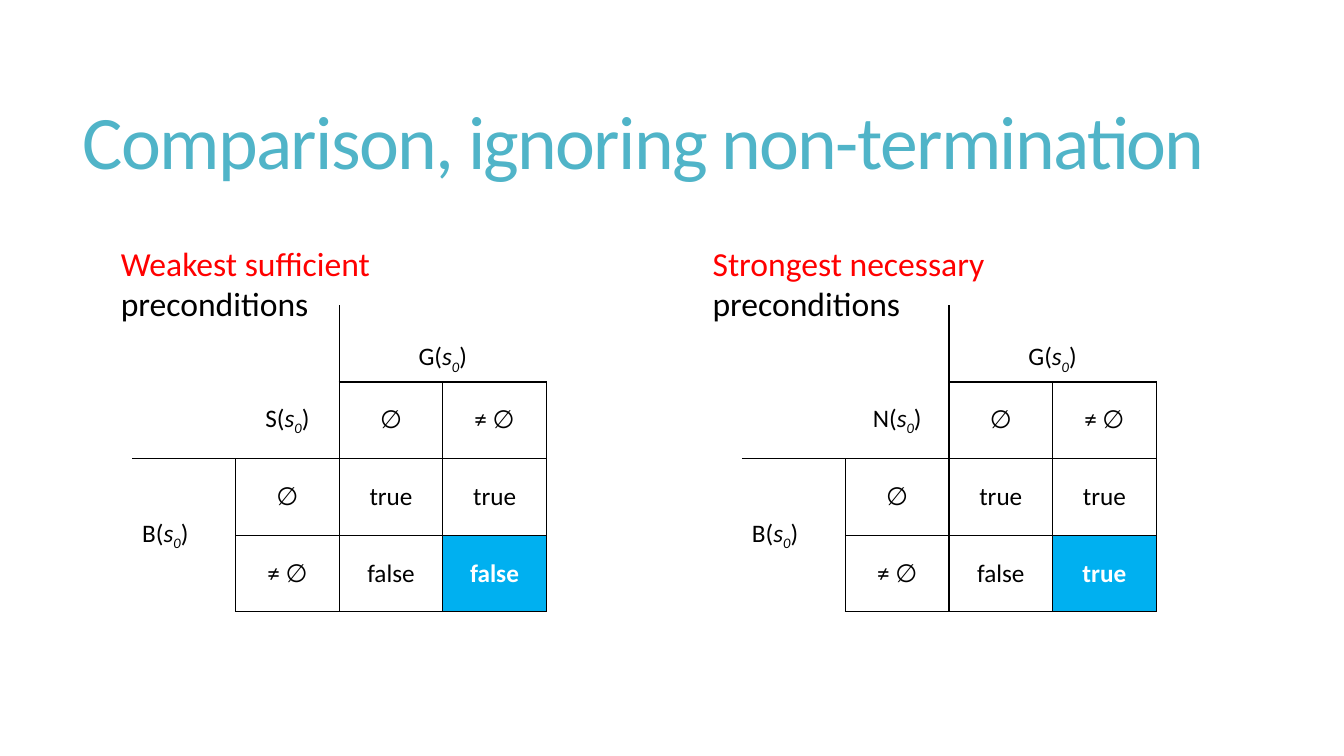
import dataclasses

import pptx
import pptx.dml.color
import pptx.enum.text
import pptx.oxml
import pptx.oxml.ns
import pptx.util

ALIGN = pptx.enum.text.PP_ALIGN
ANCHOR = pptx.enum.text.MSO_ANCHOR


@dataclasses.dataclass(frozen=True)
class Theme:
    """Colours, font and type sizes of the slide."""
    font: str = "Calibri"
    title: str = "50B4C8"
    text: str = "000000"
    accent: str = "FF0000"
    mark: str = "00B0F0"
    light: str = "FFFFFF"
    title_size: int = 54
    head_size: int = 24
    cell_size: int = 18
    border: int = 1


class Deck:
    """Draws elements on one slide, placed on a grid of 100 columns by 100 rows."""

    def __init__(self, theme):
        """Open a presentation with one title-only slide."""
        self.theme = theme
        self.prs = pptx.Presentation()
        self.prs.slide_width = pptx.util.Inches(13.33)
        self.prs.slide_height = pptx.util.Inches(7.5)
        self.slide = self.prs.slides.add_slide(self.prs.slide_layouts[5])

    def box(self, x, y, w, h):
        """Turn grid columns and rows into lengths."""
        col, row = self.prs.slide_width / 100, self.prs.slide_height / 100
        return [pptx.util.Emu(round(n)) for n in (x * col, y * row, w * col, h * row)]

    def run(self, p, text, size, color, baseline=0, spacing=0, **style):
        """Add one formatted run to a paragraph."""
        r = p.add_run()
        r.text = text
        r.font.color.rgb = pptx.dml.color.RGBColor.from_string(color)
        for name, value in {"name": self.theme.font, "size": pptx.util.Pt(size), **style}.items():
            setattr(r.font, name, value)
        for name, value in {"baseline": baseline, "spc": spacing}.items():
            if value:
                r._r.get_or_add_rPr().set(name, str(value))

    def title(self, text, *place):
        """Move and format the title placeholder."""
        sp = self.slide.shapes.title
        sp.left, sp.top, sp.width, sp.height = self.box(*place)
        tf = sp.text_frame
        tf.word_wrap = True
        tf.vertical_anchor = ANCHOR.MIDDLE
        p = tf.paragraphs[0]
        p.alignment, p.line_spacing = ALIGN.LEFT, 0.85
        self.run(p, text, self.theme.title_size, self.theme.title, spacing=-120)

    def heading(self, first, second, *place):
        """Add a two-line heading with an accented first line."""
        tf = self.slide.shapes.add_textbox(*self.box(*place)).text_frame
        tf.word_wrap = True
        p = tf.paragraphs[0]
        self.run(p, first, self.theme.head_size, self.theme.accent)
        p.add_line_break()
        self.run(p, second, self.theme.head_size, self.theme.text)

    def borders(self, cell, edges):
        """Draw the named edges of a cell and clear the others."""
        tcPr = cell._tc.get_or_add_tcPr()
        width = pptx.util.Pt(self.theme.border)
        solid = f'<a:solidFill><a:srgbClr val="{self.theme.text}"/></a:solidFill>'
        for i, edge in enumerate("LRTB"):
            paint = solid if edge in edges else "<a:noFill/>"
            tcPr.insert(i, pptx.oxml.parse_xml(
                f'<a:ln{edge} {pptx.oxml.ns.nsdecls("a")} w="{width}">{paint}</a:ln{edge}>'))

    def cell(self, cell, text, marked):
        """Fill one cell; a trailing (s0) is set in italics with a subscript."""
        t = self.theme
        cell.vertical_anchor = ANCHOR.MIDDLE
        cell.fill.background()
        if marked:
            cell.fill.solid()
            cell.fill.fore_color.rgb = pptx.dml.color.RGBColor.from_string(t.mark)
        p = cell.text_frame.paragraphs[0]
        p.alignment = ALIGN.LEFT if text.startswith("B") else ALIGN.CENTER
        if text.endswith("(s0)"):
            parts = [(text[:-3], {}), ("s", {"italic": True}),
                     ("0", {"italic": True, "baseline": -25000}), (")", {})]
        else:
            parts = [(text, {"bold": marked})] if text else []
        for part, style in parts:
            self.run(p, part, t.cell_size, t.light if marked else t.text, **style)

    def table(self, rows, merges, edges, marked, *place):
        """Add a table of equal cells with its own merges and borders."""
        frame = self.slide.shapes.add_table(len(rows), len(rows[0]), *self.box(*place))
        tbl = frame.table
        tbl.first_row = tbl.horz_banding = False
        for start, end in merges:
            tbl.cell(*start).merge(tbl.cell(*end))
        for i, row in enumerate(rows):
            for j, text in enumerate(row):
                self.cell(tbl.cell(i, j), text, (i, j) == marked)
                self.borders(tbl.cell(i, j), edges.get((i, j), "LRTB"))
        tbl.cell(0, 2).margin_top = pptx.util.Inches(0.35)


def main():
    """Build the comparison slide."""
    deck = Deck(Theme())
    deck.title("Comparison, ignoring non-termination", 5.4, 7.33, 88.37, 24.13)
    merges = [((0, 2), (0, 3)), ((2, 0), (3, 0))]
    edges = {(0, 0): "", (0, 1): "R", (0, 2): "LB", (0, 3): "RB",
             (1, 0): "B", (1, 1): "RB", (2, 0): "TR", (3, 0): "RB"}
    sides = [("Weakest sufficient", "S(s0)", "false", 9.83, 8.25, 34.5),
             ("Strongest necessary", "N(s0)", "true", 55.2, 52.28, 36.23)]
    for _, name, result, left, _, _ in sides:
        rows = [["", "", "G(s0)", ""],
                ["", name, "∅", "≠ ∅"],
                ["B(s0)", "∅", "true", "true"],
                ["", "≠ ∅", "false", result]]
        deck.table(rows, merges, edges, (3, 3), left, 40.4, 30.83, 40.53)
    for kind, _, _, _, left, width in sides:
        deck.heading(kind, "preconditions", left, 31.47, width, 6.67)
    deck.prs.save("out.pptx")


if __name__ == "__main__":
    main()
